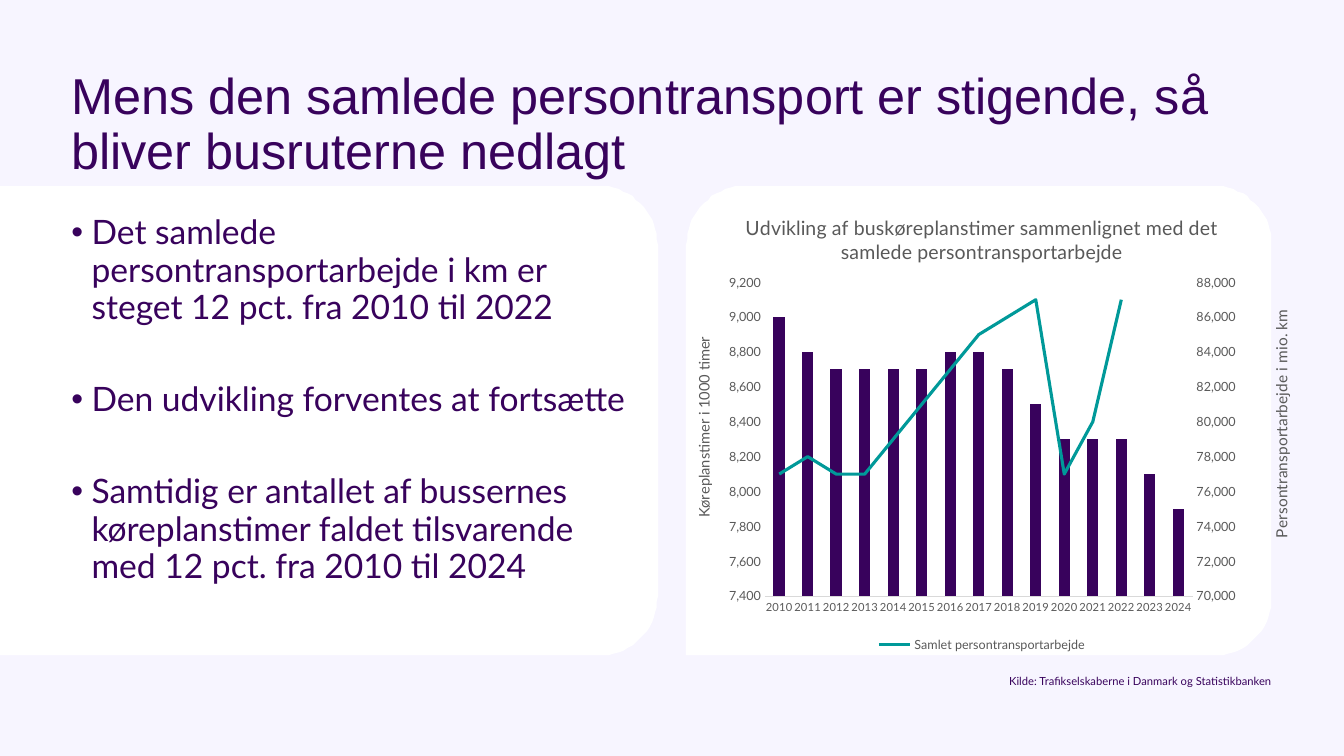
from copy import deepcopy
from math import cos, radians, sin

from pptx import Presentation
from pptx.chart.axis import ValueAxis
from pptx.chart.data import CategoryChartData
from pptx.dml.color import RGBColor
from pptx.enum.chart import XL_CHART_TYPE, XL_LEGEND_POSITION, XL_MARKER_STYLE, XL_TICK_MARK
from pptx.enum.text import MSO_ANCHOR, PP_ALIGN
from pptx.oxml import parse_xml
from pptx.oxml.ns import nsdecls, qn
from pptx.util import Pt

COLORS = {
    "background": "F7F5FF", "card": "FFFFFF", "purple": "38025C",
    "teal": "009999", "label": "595959", "grid": "D9D9D9",
}
BULLETS = [
    "Det samlede persontransportarbejde i km er steget 12 pct. fra 2010 til 2022",
    "Den udvikling forventes at fortsætte",
    "Samtidig er antallet af bussernes køreplanstimer faldet tilsvarende med 12 pct. fra 2010 til 2024",
]
YEARS = [str(year) for year in range(2010, 2025)]
BUS_HOURS = [9000, 8800, 8700, 8700, 8700, 8700, 8800, 8800, 8700, 8500, 8300, 8300, 8300, 8100, 7900]
PERSON_KM = [77000, 78000, 77000, 77000, 79000, 81000, 83000, 85000, 86000, 87000, 77000, 80000, 87000, None, None]


def rgb(name):
    return RGBColor.from_string(COLORS[name])


def style_font(font, size, color, name="Lato"):
    font.name, font.size, font.bold = name, Pt(size), False
    font.color.rgb = rgb(color)


def add_card(slide, box, rounded, radius=42):
    """White panel; rounded holds the corners clockwise from top left."""
    left, top, width, height = box
    corners = [(left, top, 1, 1), (left + width, top, -1, 1),
               (left + width, top + height, -1, -1), (left, top + height, 1, -1)]
    outline = []
    for number, (x, y, inward_x, inward_y) in enumerate(corners):
        if not rounded[number]:
            outline.append((x, y))
            continue
        for step in range(0, 91, 5):
            angle = radians(180 + 90 * number + step)
            outline.append((x + radius * (inward_x + cos(angle)),
                            y + radius * (inward_y + sin(angle))))
    builder = slide.shapes.build_freeform(*outline[0], scale=Pt(1))
    builder.add_line_segments(outline[1:], close=True)
    card = builder.convert_to_shape()
    card.shadow.inherit = False
    card.fill.solid()
    card.fill.fore_color.rgb = rgb("card")
    card.line.fill.background()


def add_text(slide, box, texts, size, spacing, font="Arial", gap=0,
             bullet=False, align=PP_ALIGN.LEFT, anchor=MSO_ANCHOR.TOP):
    frame = slide.shapes.add_textbox(*map(Pt, box)).text_frame
    frame.word_wrap = True
    frame.vertical_anchor = anchor
    frame.margin_left = frame.margin_top = frame.margin_right = frame.margin_bottom = 0
    for number, text in enumerate(texts):
        paragraph = frame.paragraphs[0] if number == 0 else frame.add_paragraph()
        paragraph.text = text
        paragraph.alignment = align
        paragraph.line_spacing = spacing
        if number:
            paragraph.space_before = Pt(gap)
        if bullet:
            properties = paragraph._p.get_or_add_pPr()
            properties.set("marL", str(Pt(14.4)))
            properties.set("indent", str(-Pt(14.4)))
            properties.append(parse_xml(f'<a:buFont {nsdecls("a")} typeface="Arial"/>'))
            properties.append(parse_xml(f'<a:buChar {nsdecls("a")} char="•"/>'))
        style_font(paragraph.font, size, "purple", font)


def chart_xml(tag, inner="", val=None):
    value = "" if val is None else f' val="{val}"'
    return parse_xml(f'<c:{tag} {nsdecls("c")}{value}>{inner}</c:{tag}>')


def place(element, index, **fractions):
    """Fix a chart part at fractions of the chart frame."""
    for old in element.findall(qn("c:layout")):
        element.remove(old)
    target = '<c:layoutTarget val="inner"/>' if "w" in fractions else ""
    modes = "".join(f'<c:{key}Mode val="edge"/>' for key in "xy")
    values = "".join(f'<c:{key} val="{value}"/>' for key, value in fractions.items())
    element.insert(index, chart_xml(
        "layout", f"<c:manualLayout>{target}{modes}{values}</c:manualLayout>"))


def style_value_axis(axis, element, title, title_size, low, high, step, x, y):
    axis.minimum_scale, axis.maximum_scale, axis.major_unit = low, high, step
    axis.major_tick_mark = XL_TICK_MARK.NONE
    axis.format.line.fill.background()
    axis.tick_labels.number_format = "#,##0"
    axis.tick_labels.number_format_is_linked = False
    style_font(axis.tick_labels.font, 9, "label")
    axis.axis_title.text_frame.text = title
    style_font(axis.axis_title.text_frame.paragraphs[0].font, title_size, "label")
    axis_title = element.find(qn("c:title"))
    body = axis_title.find(".//" + qn("a:bodyPr"))
    body.set("rot", "-5400000")
    body.set("vert", "horz")
    place(axis_title, 1, x=x, y=y)


def move_line_to_right_axis(plot_area):
    """Turn the second series into a line on its own axes; return the right axis."""
    bars = plot_area.find(qn("c:barChart"))
    series = bars.findall(qn("c:ser"))[1]
    bars.remove(series)
    for bar_only in series.findall(qn("c:invertIfNegative")):
        series.remove(bar_only)
    lines = chart_xml("lineChart", '<c:grouping val="standard"/><c:varyColors val="0"/>')
    lines.append(series)
    for tag, val in (("marker", 1), ("axId", 5001), ("axId", 5002)):
        lines.append(chart_xml(tag, val=val))
    bars.addnext(lines)
    category_axis = plot_area.find(qn("c:catAx"))
    left_axis = plot_area.find(qn("c:valAx"))
    hidden_axis, right_axis = deepcopy(category_axis), deepcopy(left_axis)
    for axis, own, other in ((hidden_axis, 5001, 5002), (right_axis, 5002, 5001)):
        axis.find(qn("c:axId")).set("val", str(own))
        axis.find(qn("c:crossAx")).set("val", str(other))
    hidden_axis.find(qn("c:delete")).set("val", "1")
    right_axis.find(qn("c:axPos")).set("val", "r")
    right_axis.find(qn("c:crosses")).set("val", "max")
    left_axis.addnext(right_axis)
    right_axis.addnext(hidden_axis)
    return right_axis


def add_transport_chart(slide, box):
    data = CategoryChartData(number_format="#,##0")
    data.categories = YEARS
    data.add_series("Køreplanstimer", BUS_HOURS)
    data.add_series("Samlet persontransportarbejde", PERSON_KM)
    chart = slide.shapes.add_chart(
        XL_CHART_TYPE.COLUMN_CLUSTERED, *map(Pt, box), data).chart
    style_font(chart.font, 10, "label")
    chart.has_title = True
    chart.chart_title.text_frame.text = (
        "Udvikling af buskøreplanstimer sammenlignet med det samlede persontransportarbejde")
    style_font(chart.chart_title.text_frame.paragraphs[0].font, 14, "label")

    # Axes
    plot_area = chart.element.find(".//" + qn("c:plotArea"))
    years = chart.category_axis
    years.major_tick_mark = XL_TICK_MARK.NONE
    years.format.line.color.rgb = rgb("grid")
    years.format.line.width = Pt(0.75)
    style_font(years.tick_labels.font, 8, "label")
    chart.value_axis.has_major_gridlines = False
    right_axis = move_line_to_right_axis(plot_area)
    left_axis = plot_area.find(qn("c:valAx"))
    style_value_axis(ValueAxis(left_axis), left_axis, "Køreplanstimer i 1000 timer",
                     10.5, 7400, 9200, 200, 0.03, 0.3)
    style_value_axis(ValueAxis(right_axis), right_axis, "Persontransportarbejde i mio. km",
                     11, 70000, 88000, 2000, 0.96, 0.24)
    gridlines = chart.value_axis.major_gridlines.format.line
    gridlines.color.rgb = rgb("grid")
    gridlines.width = Pt(0.75)
    place(plot_area, 0, x=0.15, y=0.19, w=0.69, h=0.68)

    # Series
    columns, lines = chart.plots
    columns.gap_width, columns.overlap = 150, -50
    columns.vary_by_categories = False
    columns.series[0].format.fill.solid()
    columns.series[0].format.fill.fore_color.rgb = rgb("purple")
    person_line = lines.series[0]
    person_line.smooth = False
    person_line.marker.style = XL_MARKER_STYLE.NONE
    person_line.format.line.color.rgb = rgb("teal")
    person_line.format.line.width = Pt(2.25)

    # Legend names the line only
    chart.has_legend = True
    chart.legend.position = XL_LEGEND_POSITION.BOTTOM
    chart.legend.include_in_layout = False
    style_font(chart.legend.font, 9, "label")
    legend_position = chart.element.find(".//" + qn("c:legend")).get_or_add_legendPos()
    legend_position.addnext(chart_xml("legendEntry", '<c:idx val="0"/><c:delete val="1"/>'))


def main():
    deck = Presentation()
    deck.slide_width, deck.slide_height = Pt(960), Pt(540)
    slide = deck.slides.add_slide(deck.slide_layouts[6])
    slide.background.fill.solid()
    slide.background.fill.fore_color.rgb = rgb("background")
    # Cards
    add_card(slide, (490.5, 132.7, 418, 335.8), (True, True, True, False))
    add_card(slide, (0, 132.7, 469.5, 335.8), (False, True, True, False))
    # Title, bullets and source
    add_text(slide, (51, 51, 858, 102),
             ["Mens den samlede persontransport er stigende, så bliver busruterne nedlagt"], 36, 0.9)
    add_text(slide, (51, 153.3, 398, 295), BULLETS, 24, 0.93, "Lato", gap=39, bullet=True)
    add_text(slide, (490.5, 468.5, 418, 23), ["Kilde: Trafikselskaberne i Danmark og Statistikbanken"],
             8, 0.93, "Lato", align=PP_ALIGN.RIGHT, anchor=MSO_ANCHOR.BOTTOM)
    # Chart
    add_transport_chart(slide, (480, 139, 445, 329.8))
    deck.save("out.pptx")


if __name__ == "__main__":
    main()
